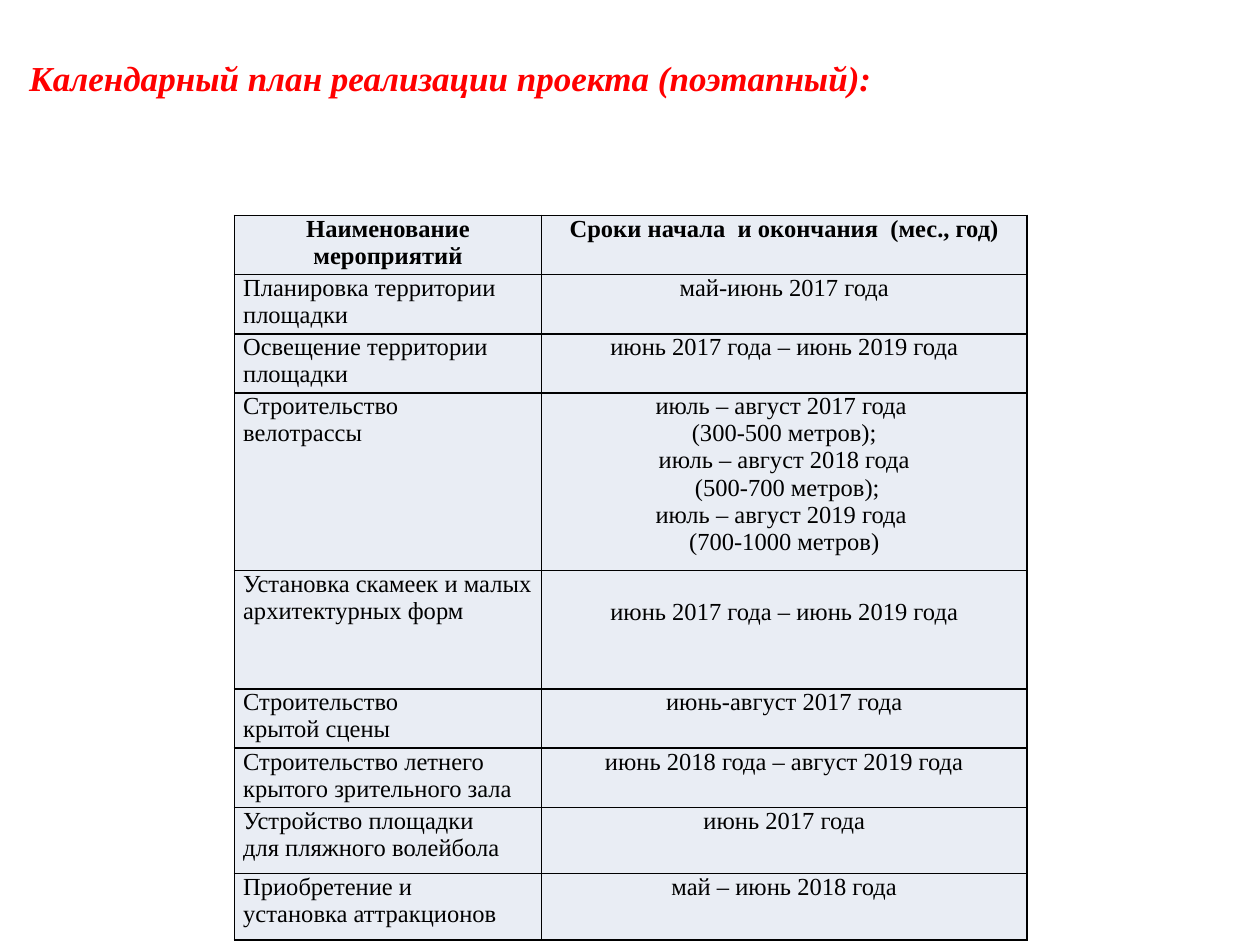
from dataclasses import dataclass

from lxml.etree import SubElement
from pptx import Presentation
from pptx.dml.color import RGBColor as Rgb
from pptx.enum.text import MSO_AUTO_SIZE as Fit, PP_ALIGN as Align
from pptx.oxml.ns import qn
from pptx.util import Inches, Pt

FACE = "Times New Roman"
BLACK, RED, PALE = "000000", "FF0000", "E9EDF4"
UNIT = 0.47
COLS = (2.44, 3.85)


@dataclass
class Stage:
    """One table row: its name, its dates, its height in units and lines to drop the dates."""
    name: str
    dates: str
    span: float = 1
    drop: int = 0


STAGES = [
    Stage("Наименование мероприятий", "Сроки начала  и окончания  (мес., год)"),
    Stage("Планировка территории площадки", "май-июнь 2017 года"),
    Stage("Освещение территории площадки", "июнь 2017 года – июнь 2019 года"),
    Stage("Строительство\nвелотрассы",
          "июль – август 2017 года \n(300-500 метров);\n"
          "июль – август 2018 года\n (500-700 метров);\n"
          "июль – август 2019 года \n(700-1000 метров)", 3),
    Stage("Установка скамеек и малых архитектурных форм",
          "июнь 2017 года – июнь 2019 года", 2, 1),
    Stage("Строительство\nкрытой сцены", "июнь-август 2017 года"),
    Stage("Строительство летнего крытого зрительного зала",
          "июнь 2018 года – август 2019 года"),
    Stage("Устройство площадки\nдля пляжного волейбола", "июнь 2017 года", 1.12),
    Stage("Приобретение и\nустановка аттракционов", "май – июнь 2018 года", 1.12),
]


def paint(hue: str) -> Rgb:
    """Turn a hex string into a colour."""
    return Rgb.from_string(hue)


def write(frame, text: str, size: int, hue: str, align, bold=False, slant=False) -> None:
    """Fill a text frame and format its runs."""
    frame.text = text
    for para in frame.paragraphs:
        para.alignment = align
        for run in para.runs:
            font = run.font
            font.name, font.size = FACE, Pt(size)
            font.bold, font.italic = bold, slant
            font.color.rgb = paint(hue)


def frame_cell(cell) -> None:
    """Give a cell its fill and thin black borders."""
    props = cell._tc.get_or_add_tcPr()
    for side in ("lnL", "lnR", "lnT", "lnB"):
        line = SubElement(props, qn(f"a:{side}"), w=str(Pt(1)))
        solid = SubElement(line, qn("a:solidFill"))
        SubElement(solid, qn("a:srgbClr"), val=BLACK)
    cell.fill.solid()
    cell.fill.fore_color.rgb = paint(PALE)


def draw_title(slide, text: str) -> None:
    """Draw the slide heading."""
    box = slide.shapes.add_textbox(Inches(0.07), Inches(0.4), Inches(7.01), Inches(0.44))
    frame = box.text_frame
    frame.word_wrap = False
    frame.auto_size = Fit.SHAPE_TO_FIT_TEXT
    write(frame, text, 20, RED, Align.CENTER, True, True)


def draw_plan(slide, stages: list[Stage]) -> None:
    """Draw the table of stages and dates."""
    high = UNIT * sum(stage.span for stage in stages)
    table = slide.shapes.add_table(
        len(stages), len(COLS), Inches(1.86), Inches(1.71),
        Inches(sum(COLS)), Inches(high)).table
    table.horz_banding = False
    for col, wide in zip(table.columns, COLS):
        col.width = Inches(wide)
    for num, (row, stage) in enumerate(zip(table.rows, stages)):
        row.height = Inches(UNIT * stage.span)
        head = num == 0
        aligns = (Align.CENTER if head else Align.LEFT, Align.CENTER)
        for cell, text, align in zip(row.cells, (stage.name, stage.dates), aligns):
            cell.margin_left = cell.margin_right = Inches(0.07)
            cell.margin_top = cell.margin_bottom = 0
            write(cell.text_frame, text, 14, BLACK, align, head)
            frame_cell(cell)
        row.cells[1].margin_top = Inches(0.22 * stage.drop)


def main() -> None:
    """Build and save the slide."""
    deck = Presentation()
    deck.slide_width, deck.slide_height = Inches(10), Inches(7.5)
    slide = deck.slides.add_slide(deck.slide_layouts[6])
    draw_title(slide, "Календарный план реализации проекта (поэтапный):")
    draw_plan(slide, STAGES)
    deck.save("out.pptx")


if __name__ == "__main__":
    main()
